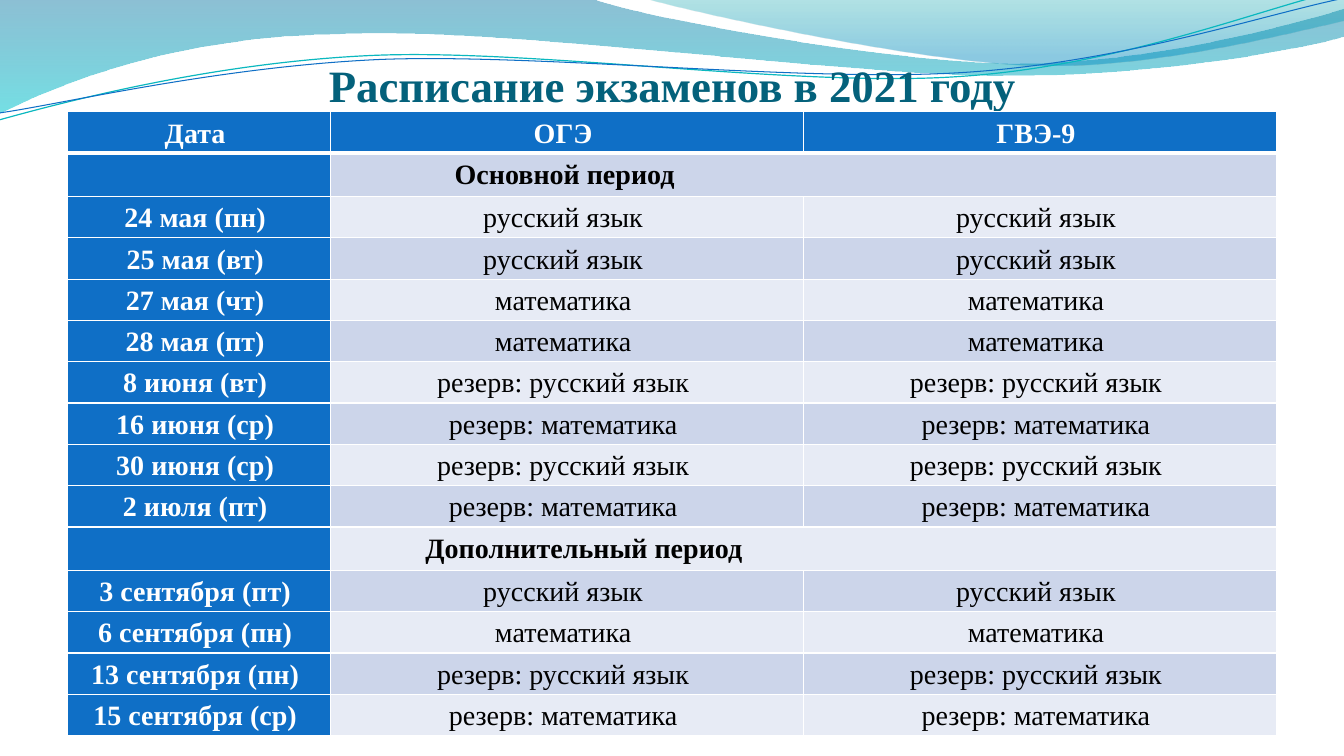
from dataclasses import dataclass

from lxml.etree import SubElement
from pptx import Presentation
from pptx.dml.color import RGBColor
from pptx.enum.text import MSO_ANCHOR, MSO_AUTO_SIZE, PP_ALIGN
from pptx.oxml import parse_xml
from pptx.oxml.ns import nsdecls, qn
from pptx.util import Pt

PX = 9144  # 100 px to the inch


@dataclass(frozen=True)
class Theme:
    font: str = "Times New Roman"
    title_size: int = 32
    cell_size: int = 20
    title: str = "04617B"
    accent: str = "0F6FC6"
    teal: str = "0AB8BF"
    white: str = "FFFFFF"
    black: str = "000000"
    bands: tuple = ("E7EBF5", "CCD5EA")
    # gradient stops: position %, colour, opacity %
    wide_wave: tuple = ((0, "0074A1", 45), (100, "00C6CF", 55))
    right_wave: tuple = ((0, "00A1A9", 30), (80, "008BBF", 45))


class SlideBuilder:
    def __init__(self, prs, theme):
        self.theme = theme
        self.s = prs.slides.add_slide(prs.slide_layouts[5])

    def text(self, tf, text, size, color, bold=True, align=PP_ALIGN.CENTER, spacing=1.0):
        p = tf.paragraphs[0]
        p.alignment, p.line_spacing = align, spacing
        r = p.add_run()
        r.text = text
        style = {"name": self.theme.font, "size": Pt(size), "bold": bold}
        for name, value in style.items():
            setattr(r.font, name, value)
        r.font.color.rgb = RGBColor.from_string(color)

    def outline(self, start, segments, close):
        """A segment is (x, y) for a line, or three points in a row for a curve."""
        points = [pair for seg in segments for pair in zip(seg[::2], seg[1::2])]
        fb = self.s.shapes.build_freeform(*start, scale=PX)
        fb.add_line_segments(points, close=close)
        sp = fb.convert_to_shape()
        sp.shadow.inherit = False
        # Join the three points of each curve into one cubic segment
        line_tos = iter(list(sp.element.iter(qn("a:lnTo"))))
        for seg in segments:
            group = [next(line_tos) for _ in seg[::2]]
            if len(group) == 3:
                cubic = parse_xml(f'<a:cubicBezTo {nsdecls("a")}/>')
                group[0].addprevious(cubic)
                for line_to in group:
                    cubic.append(line_to[0])
                    line_to.getparent().remove(line_to)
        return sp

    def wave(self, stops, start, *segments):
        sp = self.outline(start, segments, True)
        sp.line.fill.background()
        gs = "".join(
            f'<a:gs pos="{pos * 1000}"><a:srgbClr val="{color}">'
            f'<a:alpha val="{alpha * 1000}"/></a:srgbClr></a:gs>'
            for pos, color, alpha in stops)
        grad = parse_xml(f'<a:gradFill {nsdecls("a")} rotWithShape="1"><a:gsLst>{gs}</a:gsLst>'
                         '<a:lin ang="5400000" scaled="0"/></a:gradFill>')
        sp.element.spPr.find(qn("a:custGeom")).addnext(grad)

    def curve(self, color, width, start, *segments):
        sp = self.outline(start, segments, False)
        sp.fill.background()
        sp.line.color.rgb = RGBColor.from_string(color)
        sp.line.width = Pt(width)

    def title(self, text, left, top, width, height):
        sp = self.s.shapes.title
        box = {"left": left, "top": top, "width": width, "height": height}
        for name, value in box.items():
            setattr(sp, name, value * PX)
        tf = sp.text_frame
        frame = {"margin_left": 0, "margin_top": 5 * PX, "margin_right": 0, "margin_bottom": 0,
                 "vertical_anchor": MSO_ANCHOR.BOTTOM, "word_wrap": True,
                 "auto_size": MSO_AUTO_SIZE.NONE}
        for name, value in frame.items():
            setattr(tf, name, value)
        self.text(tf, text, self.theme.title_size, self.theme.title)
        # Bring the title in front of the waves
        sp.element.getparent().append(sp.element)

    def cell(self, cell, fill, top=1, bottom=1):
        margins = {"margin_left": 7, "margin_top": 4, "margin_right": 8, "margin_bottom": 0}
        for name, value in margins.items():
            setattr(cell, name, value * PX)
        tc_pr = cell._tc.get_or_add_tcPr()
        for side, width in {"L": 1, "R": 1, "T": top, "B": bottom}.items():
            ln = SubElement(tc_pr, qn(f"a:ln{side}"), w=str(Pt(width)))
            solid = SubElement(ln, qn("a:solidFill"))
            SubElement(solid, qn("a:srgbClr"), val=self.theme.white)
        cell.fill.solid()
        cell.fill.fore_color.rgb = RGBColor.from_string(fill)

    def schedule(self, left, top, col_widths, row_height, period_height, header, rows):
        th = self.theme
        table = self.s.shapes.add_table(
            len(rows) + 1, len(col_widths), left * PX, top * PX,
            sum(col_widths) * PX, row_height * (len(rows) + 1) * PX).table
        for col, width in zip(table.columns, col_widths):
            col.width = width * PX

        # Header row
        table.rows[0].height = row_height * PX
        for cell, label in zip(table.rows[0].cells, header):
            self.cell(cell, th.accent, bottom=3)
            self.text(cell.text_frame, f"{label} ", th.cell_size, th.white, spacing=1.07)

        # Exam rows, and period rows that span both exam columns
        for i, (date, exam, indent) in enumerate(rows, 1):
            table.rows[i].height = (row_height if date else period_height) * PX
            date_cell, *exam_cells = table.rows[i].cells
            edge = 3 if i == 1 else 1
            self.cell(date_cell, th.accent, top=edge)
            if date:
                self.text(date_cell.text_frame, f"{date} ", th.cell_size, th.white, spacing=1.07)
                for cell in exam_cells:
                    self.cell(cell, th.bands[i % 2])
                    self.text(cell.text_frame, f"{exam} ", th.cell_size, th.black,
                              bold=False, spacing=1.07)
            else:
                period = exam_cells[0]
                period.merge(exam_cells[-1])
                self.cell(period, th.bands[i % 2], top=edge)
                self.text(period.text_frame, exam, th.cell_size, th.black,
                          align=PP_ALIGN.LEFT, spacing=1.07)
                period.text_frame.paragraphs[0]._p.get_or_add_pPr().set("marL", str(indent * PX))


def main():
    prs = Presentation()
    prs.slide_width, prs.slide_height = 1333 * PX, 750 * PX
    theme = Theme()
    b = SlideBuilder(prs, theme)

    # Waves along the top edge
    b.wave(theme.wide_wave, (0, 0), (587, -1),
           (634, 17, 885, 63, 1011, 63), (1138, 63, 1278, 26, 1333, 9), (1335, 36),
           (1311, 44, 1160, 76, 994, 75), (829, 75, 509, 28, 343, 34),
           (172, 36, 61, 83, -1, 113))
    b.wave(theme.right_wave, (639, -1),
           (679, 11, 909, 62, 1025, 65), (1141, 69, 1282, 32, 1333, 21), (1333, 0))
    b.curve(theme.teal, 0.85, (-1, 119), (64, 101, 211, 62, 369, 55),
            (527, 48, 790, 87, 950, 76), (1110, 66, 1252, 8, 1331, -10))
    b.curve(theme.accent, 0.75, (0, 112), (63, 103, 218, 66, 378, 59),
            (537, 53, 796, 82, 955, 72), (1115, 62, 1255, 14, 1334, -2))

    b.title("Расписание экзаменов в 2021 году", 67, 77, 1200, 34)

    # Exam schedule: date, exam, indent of a period heading
    russian, maths = "русский язык", "математика"
    spare_russian, spare_maths = f"резерв: {russian}", f"резерв: {maths}"
    rows = [
        ("", "Основной период", 116),
        ("24 мая (пн)", russian, 0),
        ("25 мая (вт)", russian, 0),
        ("27 мая (чт)", maths, 0),
        ("28 мая (пт)", maths, 0),
        ("8 июня (вт)", spare_russian, 0),
        ("16 июня (ср)", spare_maths, 0),
        ("30 июня (ср)", spare_russian, 0),
        ("2 июля (пт)", spare_maths, 0),
        ("", "Дополнительный период", 87),
        ("3 сентября (пт)", russian, 0),
        ("6 сентября (пн)", maths, 0),
        ("13 сентября (пн)", spare_russian, 0),
        ("15 сентября (ср)", spare_maths, 0),
    ]
    b.schedule(67, 111, (261, 469, 469), 41, 43, ("Дата", "ОГЭ", "ГВЭ-9"), rows)

    prs.save("out.pptx")


if __name__ == "__main__":
    main()
